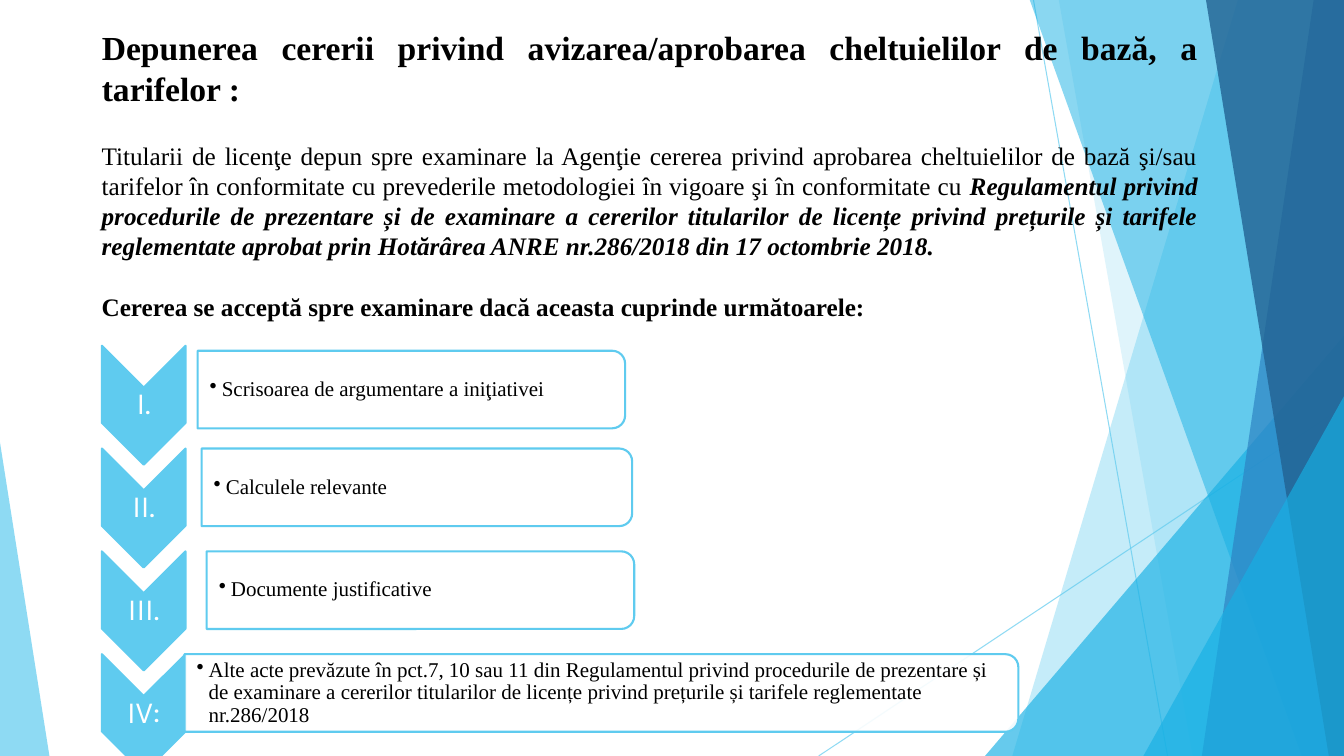
from lxml import etree
from pptx import Presentation
from pptx.dml.color import RGBColor
from pptx.enum import shapes, text
from pptx.oxml.ns import qn
from pptx.util import Inches, Pt

WIDTH, HEIGHT = 13.33, 7.5
SKY = RGBColor(0x5F, 0xCB, 0xEF)
AZURE = RGBColor(0x17, 0xB0, 0xE4)
BLUE = RGBColor(0x2E, 0x83, 0xC3)
NAVY = RGBColor(0x22, 0x62, 0x92)
WHITE = RGBColor(0xFF, 0xFF, 0xFF)
BLACK = RGBColor(0, 0, 0)
SERIF, SANS = "Times New Roman", "Karla"

TITLE = "Depunerea cererii privind avizarea/aprobarea cheltuielilor de bază, a tarifelor :"
INTRO = ("Titularii de licenţe depun spre examinare la Agenţie cererea privind aprobarea "
         "cheltuielilor de bază şi/sau tarifelor în conformitate cu prevederile metodologiei "
         "în vigoare şi în conformitate cu ")
REGULATION = ("Regulamentul privind procedurile de prezentare și de examinare a cererilor "
              "titularilor de licențe privind prețurile și tarifele reglementate aprobat prin "
              "Hotărârea ANRE nr.286/2018 din 17 octombrie 2018.")
CONDITION = "Cererea se acceptă spre examinare dacă aceasta cuprinde următoarele:"

# number, text, panel left, panel width, panel offset below the chevron top
STEPS = [
    ("I.", "Scrisoarea de argumentare a iniţiativei", 1.96, 4.24, 0.05),
    ("II.", "Calculele relevante", 2.0, 4.27, 0),
    ("III.", "Documente justificative", 2.05, 4.24, 0),
    ("IV:", "Alte acte prevăzute în pct.7, 10 sau 11 din Regulamentul privind procedurile de "
            "prezentare și de examinare a cererilor titularilor de licențe privind prețurile și "
            "tarifele reglementate nr.286/2018", 1.83, 8.27, 0),
]
STEP_LEFT, STEP_TOP, STEP_PITCH = 1.01, 3.43, 1.02
CHEVRON_WIDTH, CHEVRON_HEIGHT, PANEL_HEIGHT = 0.83, 1.18, 0.77

RAYS = [((10.25, 0), (11.58, HEIGHT)), ((WIDTH, 4.03), (8.12, HEIGHT))]
# Back to front. Facets: top x, bottom x. Corners: left, top, width, apex side.
DECORATION = [
    ("facet", (12.28, 10.04), SKY, 36),
    ("facet", (10.5, 11.83), SKY, 20),
    ("corner", (9.77, 3.33, 3.56, 1), AZURE, 66),
    ("facet", (10.21, 12.91), AZURE, 50),
    ("facet", (13.03, 11.92), BLUE, 70),
    ("facet", (11.96, 13.18), NAVY, 80),
    ("corner", (11.34, 3.93, 1.99, 1), AZURE, 66),
    ("corner", (0, 4.39, 0.49, 0), SKY, 70),
]


def set_opacity(color_parent, percent):
    color = next(color_parent.iter(qn("a:srgbClr")))
    etree.SubElement(color, qn("a:alpha")).set("val", str(percent * 1000))


def paint(shape, color, opacity=100, outline=None):
    shape.shadow.inherit = False
    shape.fill.solid()
    shape.fill.fore_color.rgb = color
    if opacity < 100:
        set_opacity(shape.element.spPr.find(qn("a:solidFill")), opacity)
    if outline is None:
        shape.line.fill.background()
    else:
        shape.line.color.rgb = outline
        shape.line.width = Pt(1.5)


def add_ray(page, start, end):
    ray = page.shapes.add_connector(shapes.MSO_CONNECTOR.STRAIGHT,
                                    *map(Inches, start + end))
    ray.line.color.rgb = SKY
    ray.line.width = Pt(0.75)
    properties = ray.element.spPr
    set_opacity(properties, 70)
    etree.SubElement(properties, qn("a:effectLst"))


def add_facet(page, top_x, bottom_x):
    """Add a band from the given slanted edge to the right side of the slide."""
    points = [(top_x, -0.01), (WIDTH, -0.01), (WIDTH, HEIGHT), (bottom_x, HEIGHT)]
    points = [(Inches(x), Inches(y)) for x, y in points]
    builder = page.shapes.build_freeform(*points[0])
    builder.add_line_segments(points[1:], close=True)
    return builder.convert_to_shape()


def add_corner(page, left, top, width, apex):
    corner = page.shapes.add_shape(shapes.MSO_SHAPE.ISOSCELES_TRIANGLE,
                                   *map(Inches, (left, top, width, HEIGHT - top)))
    corner.adjustments[0] = apex
    return corner


def add_turned(page, kind, left, top, width, height):
    """Add a shape turned by 90 degrees that covers the given area."""
    x, y = left + (width - height) / 2, top + (height - width) / 2
    shape = page.shapes.add_shape(kind, *map(Inches, (x, y, height, width)))
    shape.rotation = 90
    return shape


def add_box(page, left, top, width, height):
    return page.shapes.add_textbox(*map(Inches, (left, top, width, height)))


def set_frame(box, anchor=text.MSO_ANCHOR.TOP, insets=(0.1, 0.05, 0.1, 0.05)):
    frame = box.text_frame
    frame.word_wrap = True
    frame.auto_size = text.MSO_AUTO_SIZE.NONE
    frame.vertical_anchor = anchor
    (frame.margin_left, frame.margin_top,
     frame.margin_right, frame.margin_bottom) = map(Inches, insets)
    return frame


def write(para, words, size, font=SERIF, color=BLACK, bold=False, italic=False,
          align=None, spacing=None):
    if align is not None:
        para.alignment = align
    if spacing is not None:
        para.line_spacing = spacing
    span = para.add_run()
    span.text = words
    span.font.name, span.font.size = font, Pt(size)
    span.font.bold, span.font.italic = bold, italic
    span.font.color.rgb = color


def add_bullet(para, indent):
    properties = para._p.get_or_add_pPr()
    properties.set("marL", str(Inches(indent)))
    properties.set("indent", str(-Inches(indent)))
    etree.SubElement(properties, qn("a:buChar")).set("char", "•")


def add_step(page, row, number, words, left, width, offset):
    top = STEP_TOP + row * STEP_PITCH
    chevron = add_turned(page, shapes.MSO_SHAPE.CHEVRON, STEP_LEFT, top,
                         CHEVRON_WIDTH, CHEVRON_HEIGHT)
    paint(chevron, SKY, outline=SKY)
    label = add_box(page, STEP_LEFT, top + 0.41, CHEVRON_WIDTH, 0.35)
    frame = set_frame(label, text.MSO_ANCHOR.MIDDLE, (0.02,) * 4)
    write(frame.paragraphs[0], number, 22, font=SANS, color=WHITE,
          align=text.PP_ALIGN.CENTER, spacing=0.9)

    top += offset
    panel = add_turned(page, shapes.MSO_SHAPE.ROUND_2_SAME_RECTANGLE, left, top,
                       width, PANEL_HEIGHT)
    paint(panel, WHITE, opacity=90, outline=SKY)
    box = add_box(page, left, top + 0.04, width - 0.04, PANEL_HEIGHT - 0.08)
    frame = set_frame(box, text.MSO_ANCHOR.MIDDLE, (0.12, 0.01, 0.01, 0.01))
    write(frame.paragraphs[0], words, 15, spacing=0.9)
    add_bullet(frame.paragraphs[0], 0.12)


def add_heading(page):
    title = page.shapes.title
    title.left, title.top, title.width, title.height = map(Inches, (0.91, 0.22, 11.07, 0.9))
    page.shapes.element.append(title.element)  # in front of the decoration
    write(set_frame(title).paragraphs[0], TITLE, 24, bold=True,
          align=text.PP_ALIGN.JUSTIFY)

    frame = set_frame(add_box(page, 0.91, 1.34, 11.07, 1.91))
    intro, condition = frame.paragraphs[0], frame.add_paragraph()
    write(intro, INTRO, 18, align=text.PP_ALIGN.JUSTIFY)
    write(intro, REGULATION, 18, bold=True, italic=True)
    condition.space_before = Pt(21.5)
    write(condition, CONDITION, 18, bold=True, align=text.PP_ALIGN.JUSTIFY)


def main():
    deck = Presentation()
    deck.slide_width, deck.slide_height = Inches(WIDTH), Inches(HEIGHT)
    page = deck.slides.add_slide(deck.slide_layouts[5])
    for start, end in RAYS:
        add_ray(page, start, end)
    makers = {"facet": add_facet, "corner": add_corner}
    for kind, geometry, color, opacity in DECORATION:
        paint(makers[kind](page, *geometry), color, opacity)
    add_heading(page)
    for row, step in enumerate(STEPS):
        add_step(page, row, *step)
    deck.save("out.pptx")


if __name__ == "__main__":
    main()
